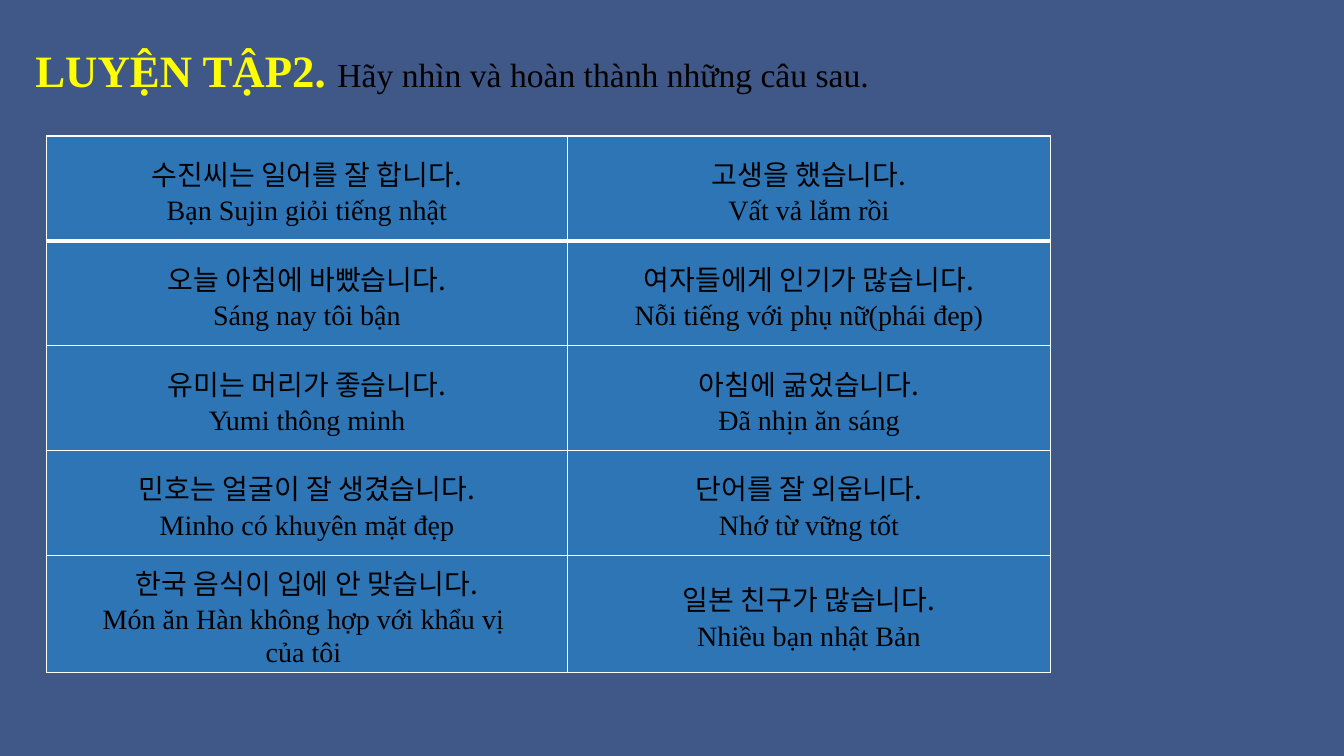
from lxml.etree import SubElement
from pptx import Presentation
from pptx.dml.color import RGBColor
from pptx.enum.text import MSO_ANCHOR, MSO_AUTO_SIZE, PP_ALIGN
from pptx.oxml.ns import qn
from pptx.util import Inches, Pt

BACKGROUND = RGBColor(0x40, 0x58, 0x88)
CELL_BLUE = RGBColor(0x2E, 0x75, 0xB6)
YELLOW = RGBColor(0xFF, 0xFF, 0x00)
BLACK = RGBColor(0x00, 0x00, 0x00)
WHITE = RGBColor(0xFF, 0xFF, 0xFF)

LATIN_FONT = "Times New Roman"
KOREAN_FONT = "Noto Sans CJK KR"

COLUMN_WIDTHS = [5.17, 4.79]
ROW_HEIGHTS = [1.04, 1.04, 1.04, 1.04, 1.16]

# Each cell: the Korean sentence, then its Vietnamese translation
SENTENCES = [
    [("수진씨는 일어를 잘 합니다.", "Bạn Sujin giỏi tiếng nhật"),
     ("고생을 했습니다.", "Vất vả lắm rồi")],
    [("오늘 아침에 바빴습니다.", "Sáng nay tôi bận"),
     ("여자들에게 인기가 많습니다.", "Nỗi tiếng với phụ nữ(phái đep)")],
    [("유미는 머리가 좋습니다.", "Yumi thông minh"),
     ("아침에 굶었습니다.", "Đã nhịn ăn sáng")],
    [("민호는 얼굴이 잘 생겼습니다.", "Minho có khuyên mặt đẹp"),
     ("단어를 잘 외웁니다.", "Nhớ từ vững tốt")],
    [("한국 음식이 입에 안 맞습니다.", "Món ăn Hàn không hợp với khẩu vị ", "của tôi "),
     ("일본 친구가 많습니다.", "Nhiều bạn nhật Bản")],
]


class ExerciseSlide:
    line_spacing = 1.07
    text_size = 20

    def __init__(self, presentation):
        self.slide = presentation.slides.add_slide(presentation.slide_layouts[5])
        fill = self.slide.background.fill
        fill.solid()
        fill.fore_color.rgb = BACKGROUND

    def format_run(self, run, font_name, size, color, bold=False):
        run.font.name = font_name
        run.font.size = Pt(size)
        run.font.bold = bold
        run.font.color.rgb = color
        if font_name == KOREAN_FONT:
            SubElement(run.font._element, qn("a:ea")).set("typeface", font_name)

    def add_title(self, label, instruction, left, top, width, height):
        title = self.slide.shapes.title
        title.left, title.top = Inches(left), Inches(top)
        title.width, title.height = Inches(width), Inches(height)
        frame = title.text_frame
        frame.word_wrap = False
        frame.auto_size = MSO_AUTO_SIZE.SHAPE_TO_FIT_TEXT
        frame.vertical_anchor = MSO_ANCHOR.TOP
        paragraph = frame.paragraphs[0]
        paragraph.alignment = PP_ALIGN.JUSTIFY
        paragraph.line_spacing = self.line_spacing
        paragraph.space_after = Pt(8)
        for text, size, color, bold in [(label, 32, YELLOW, True),
                                        (instruction, 24, BLACK, False)]:
            run = paragraph.add_run()
            run.text = text
            self.format_run(run, LATIN_FONT, size, color, bold)

    def add_border(self, cell, side, width):
        line = SubElement(cell._tc.get_or_add_tcPr(), qn(f"a:{side}"), w=str(Pt(width)))
        fill = SubElement(line, qn("a:solidFill"))
        SubElement(fill, qn("a:srgbClr"), val=str(WHITE))

    def fill_cell(self, cell, lines, top_border, bottom_border):
        cell.vertical_anchor = MSO_ANCHOR.MIDDLE
        cell.margin_left = cell.margin_right = Inches(0.07)
        cell.margin_top = cell.margin_bottom = 0
        cell.text_frame.text = "\n".join(lines)
        for index, paragraph in enumerate(cell.text_frame.paragraphs):
            paragraph.alignment = PP_ALIGN.CENTER
            paragraph.line_spacing = self.line_spacing
            font_name = LATIN_FONT if index else KOREAN_FONT
            self.format_run(paragraph.runs[0], font_name, self.text_size, BLACK)
        # Borders come before the fill in the cell properties
        for side, width in [("lnL", 1), ("lnR", 1),
                            ("lnT", top_border), ("lnB", bottom_border)]:
            self.add_border(cell, side, width)
        cell.fill.solid()
        cell.fill.fore_color.rgb = CELL_BLUE

    def add_sentence_table(self, rows, left, top):
        frame = self.slide.shapes.add_table(
            len(rows), len(COLUMN_WIDTHS), Inches(left), Inches(top),
            Inches(sum(COLUMN_WIDTHS)), Inches(sum(ROW_HEIGHTS)))
        table = frame.table
        for column, width in zip(table.columns, COLUMN_WIDTHS):
            column.width = Inches(width)
        for row_index, (row, height) in enumerate(zip(rows, ROW_HEIGHTS)):
            table.rows[row_index].height = Inches(height)
            # A thick rule parts the first row from the rest
            top_border = 3 if row_index == 1 else 1
            bottom_border = 3 if row_index == 0 else 1
            for column_index, lines in enumerate(row):
                self.fill_cell(table.cell(row_index, column_index), lines,
                               top_border, bottom_border)


def main():
    presentation = Presentation()
    presentation.slide_width = Inches(13.33)
    presentation.slide_height = Inches(7.5)

    exercise = ExerciseSlide(presentation)
    exercise.add_title("LUYỆN TẬP2. ", "Hãy nhìn và hoàn thành những câu sau.",
                       0.25, 0.34, 8.55, 0.68)
    exercise.add_sentence_table(SENTENCES, 0.46, 1.35)

    presentation.save("out.pptx")


if __name__ == "__main__":
    main()
